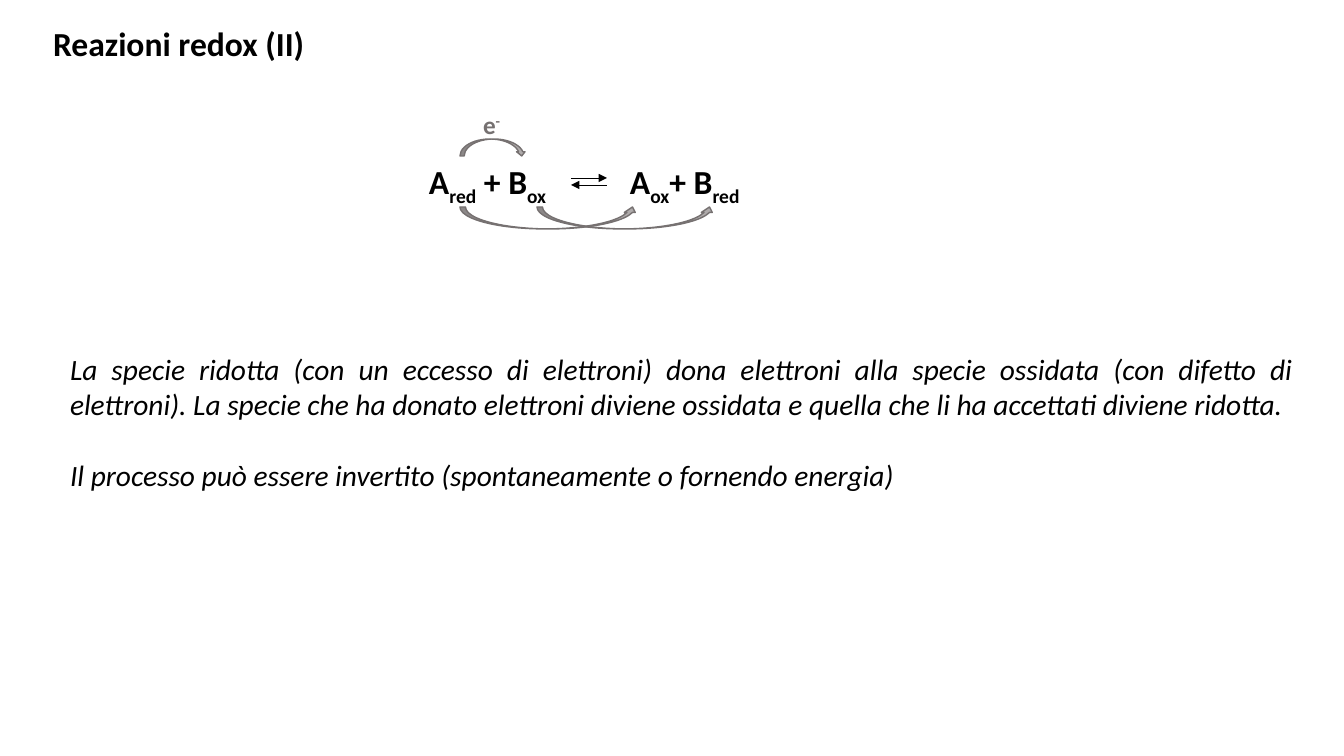
import pptx
import pptx.util
import pptx.dml.color
import pptx.enum.shapes
import pptx.enum.text
import pptx.oxml
import pptx.oxml.ns

RGBColor = pptx.dml.color.RGBColor
SHAPE = pptx.enum.shapes.MSO_SHAPE
ALIGN = pptx.enum.text.PP_ALIGN

BLACK = RGBColor(0x00, 0x00, 0x00)
GRAY = RGBColor(0x76, 0x71, 0x71)
LIGHT_GRAY = RGBColor(0xAF, 0xAB, 0xAB)
FONT = "Calibri"
SUB, SUPER = -25000, 30000
INSET = 5

TITLE = "Reazioni redox (II)"
EXPLANATION = [
    "La specie ridotta (con un eccesso di elettroni) dona elettroni alla specie ossidata "
    "(con difetto di elettroni). La specie che ha donato elettroni diviene ossidata "
    "e quella che li ha accettati diviene ridotta.",
    "Il processo può essere invertito (spontaneamente o fornendo energia)",
]
FORMULAS = [
    ((424, 156, 143, 49), 24, BLACK, [("A", 0), ("red", SUB), (" + B", 0), ("ox", SUB)]),
    ((625, 156, 135, 49), 24, BLACK, [("A", 0), ("ox", SUB), ("+ B", 0), ("red", SUB)]),
    ((478, 104, 46, 36), 18, GRAY, [("e", 0), ("-", SUPER)]),
]
TRANSFERS = [
    (SHAPE.CURVED_DOWN_ARROW, (460, 139, 66, 17)),
    (SHAPE.CURVED_UP_ARROW, (537, 207, 178, 22)),
    (SHAPE.CURVED_UP_ARROW, (460, 207, 178, 22)),
]
EQUILIBRIUM = [(571, 607, 178), (607, 571, 185)]


def px(length):
    return round(length * 914400 / 100.8)


def place(shape, box):
    shape.left, shape.top, shape.width, shape.height = map(px, box)


def prepare(shape):
    frame = shape.text_frame
    frame.word_wrap = True
    frame.auto_size = pptx.enum.text.MSO_AUTO_SIZE.NONE
    frame.vertical_anchor = pptx.enum.text.MSO_ANCHOR.TOP
    frame.margin_left = frame.margin_right = px(INSET)
    frame.margin_top = frame.margin_bottom = px(INSET)
    return frame


def add_run(paragraph, text, size, color, bold=False, italic=False, baseline=0):
    run = paragraph.add_run()
    run.text = text
    run.font.name = FONT
    run.font.size = pptx.util.Pt(size)
    run.font.bold = bold
    run.font.italic = italic
    run.font.color.rgb = color
    if baseline:
        run.font._element.set("baseline", str(baseline))


def add_child(parent, tag, **attributes):
    child = pptx.oxml.ns.qn(tag)
    element = parent.makeelement(child, attributes)
    parent.append(element)


presentation = pptx.Presentation()
presentation.slide_width = px(1344)
presentation.slide_height = px(756)
slide = presentation.slides.add_slide(presentation.slide_layouts[1])
title, explanation = slide.placeholders

place(title, (48, 18, 270, 43))
heading = prepare(title).paragraphs[0]
heading.alignment = ALIGN.LEFT
add_run(heading, TITLE, 24, BLACK, bold=True)

place(explanation, (65, 346, 1233, 185))
explanation_frame = prepare(explanation)
for index, sentence in enumerate(EXPLANATION):
    paragraph = explanation_frame.add_paragraph() if index else explanation_frame.paragraphs[0]
    paragraph.alignment = ALIGN.JUSTIFY
    paragraph.space_before = pptx.util.Pt(25.5 * index)
    properties = paragraph._p.get_or_add_pPr()
    properties.set("marL", "0")
    properties.set("indent", "0")
    add_child(properties, "a:buNone")
    add_run(paragraph, sentence, 21, BLACK, italic=True)

for box, size, color, parts in FORMULAS:
    formula = slide.shapes.add_textbox(*map(px, box))
    paragraph = prepare(formula).paragraphs[0]
    for text, baseline in parts:
        add_run(paragraph, text, size, color, bold=True, baseline=baseline)

for start, end, y in EQUILIBRIUM:
    direction = slide.shapes.add_connector(
        pptx.enum.shapes.MSO_CONNECTOR.STRAIGHT, px(start), px(y), px(end), px(y))
    direction.line.color.rgb = BLACK
    direction.line.width = pptx.util.Pt(0.5)
    add_child(direction.line._get_or_add_ln(), "a:tailEnd", type="triangle")
    add_child(direction._element.spPr, "a:effectLst")

for arrow, box in TRANSFERS:
    transfer = slide.shapes.add_shape(arrow, *map(px, box))
    transfer.shadow.inherit = False
    transfer.fill.solid()
    transfer.fill.fore_color.rgb = LIGHT_GRAY
    transfer.line.color.rgb = GRAY
    transfer.line.width = pptx.util.Pt(1)

presentation.save("out.pptx")
